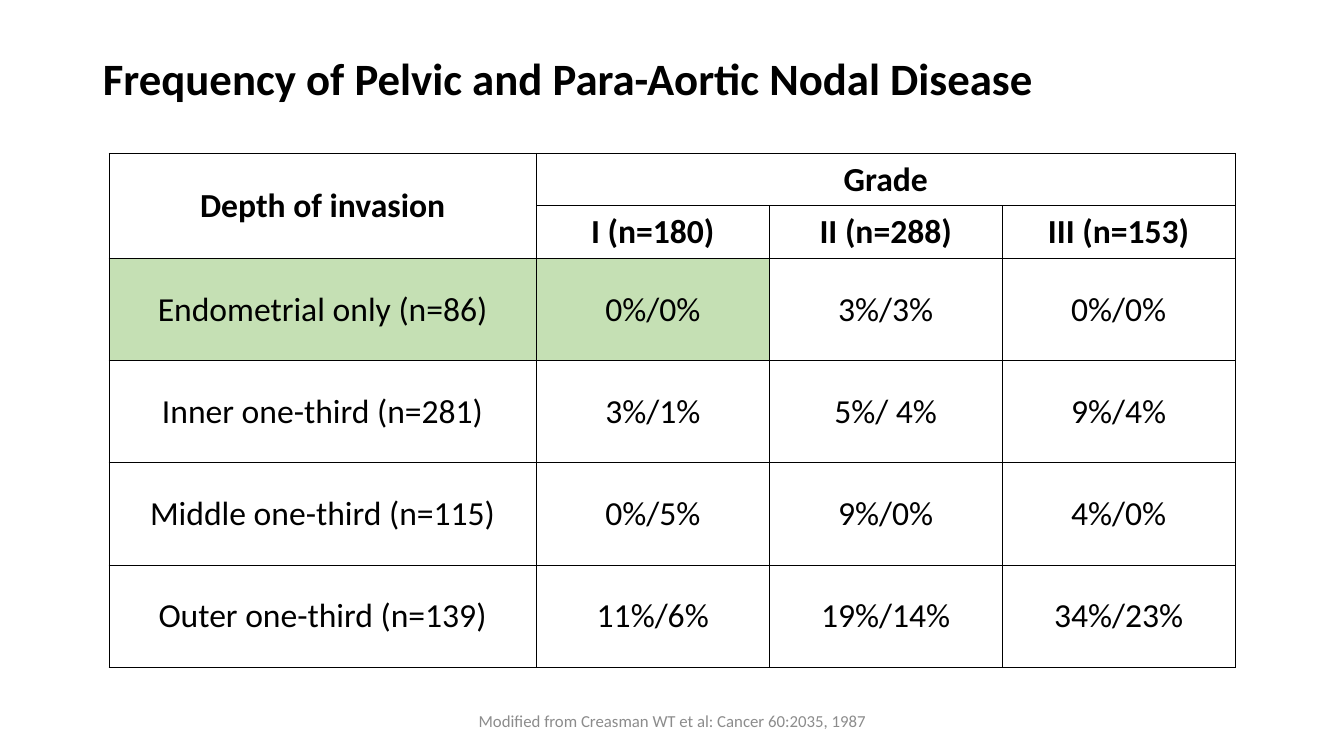
from lxml import etree
from pptx import Presentation
from pptx.dml.color import RGBColor
from pptx.enum.text import MSO_ANCHOR, MSO_AUTO_SIZE, PP_ALIGN
from pptx.oxml.ns import qn
from pptx.util import Inches, Pt

TOP, MIDDLE = MSO_ANCHOR.TOP, MSO_ANCHOR.MIDDLE
LEFT, CENTER = PP_ALIGN.LEFT, PP_ALIGN.CENTER
NO_FIT = MSO_AUTO_SIZE.NONE
TITLE_ONLY = 5

COLORS = {"text": "000000", "source": "8C8C8C", "line": "000000", "highlight": "C5E0B4"}
FORMATS = {
    "title": {"name": "Calibri", "size": Pt(32), "bold": True},
    "header": {"name": "Calibri", "size": Pt(24), "bold": True},
    "body": {"name": "Calibri", "size": Pt(24), "bold": False},
    "source": {"name": "Calibri", "size": Pt(12), "bold": False},
}
CELL_MARGINS = {
    "margin_left": Inches(0.01),
    "margin_right": Inches(0.01),
    "margin_top": Inches(0.01),
    "margin_bottom": 0,
}
ROWS = [
    ["Depth of invasion", "Grade", "", ""],
    ["", "I (n=180)", "II (n=288)", "III (n=153)"],
    ["Endometrial only (n=86)", "0%/0%", "3%/3%", "0%/0%"],
    ["Inner one-third (n=281)", "3%/1%", "5%/ 4%", "9%/4%"],
    ["Middle one-third (n=115)", "0%/5%", "9%/0%", "4%/0%"],
    ["Outer one-third (n=139)", "11%/6%", "19%/14%", "34%/23%"],
]
HEADER_ROWS = 2
HIGHLIGHTED = {(2, 0), (2, 1)}


def set_attrs(obj, values):
    for name, value in values.items():
        setattr(obj, name, value)


def write_text(tf, text, style, color, align):
    p = tf.paragraphs[0]
    p.alignment = align
    r = p.add_run()
    r.text = text
    set_attrs(r.font, FORMATS[style])
    r.font.color.rgb = RGBColor.from_string(COLORS[color])
    return p


def add_title(slide, box, text):
    sp = slide.shapes.title
    set_attrs(sp, dict(zip(("left", "top", "width", "height"), map(Inches, box))))
    tf = sp.text_frame
    set_attrs(tf, {"auto_size": NO_FIT, "word_wrap": True,
                   "vertical_anchor": TOP, "margin_top": Inches(0.16)})
    write_text(tf, text, "title", "text", LEFT).line_spacing = 0.9


def add_source(slide, box, text):
    tf = slide.shapes.add_textbox(*map(Inches, box)).text_frame
    set_attrs(tf, {"word_wrap": True, "vertical_anchor": MIDDLE})
    write_text(tf, text, "source", "source", CENTER)


def add_borders(cell):
    tc_pr = cell._tc.get_or_add_tcPr()
    for side in ("lnL", "lnR", "lnT", "lnB"):
        ln = etree.SubElement(tc_pr, qn(f"a:{side}"), w=str(Pt(0.5)))
        fill = etree.SubElement(ln, qn("a:solidFill"))
        etree.SubElement(fill, qn("a:srgbClr"), val=COLORS["line"])


def add_frequency_table(slide, box):
    left, top, width, height = box
    n_rows, n_cols = len(ROWS), len(ROWS[0])
    header_h, first_w = 0.52, 4.24
    body_h = (height - HEADER_ROWS * header_h) / (n_rows - HEADER_ROWS)
    grade_w = (width - first_w) / (n_cols - 1)
    table = slide.shapes.add_table(n_rows, n_cols, *map(Inches, box)).table
    set_attrs(table, {"first_row": False, "horz_banding": False})
    for j, col in enumerate(table.columns):
        col.width = Inches(grade_w if j else first_w)
    for i, row in enumerate(table.rows):
        row.height = Inches(header_h if i < HEADER_ROWS else body_h)
        for j, text in enumerate(ROWS[i]):
            cell = table.cell(i, j)
            set_attrs(cell, CELL_MARGINS)
            cell.vertical_anchor = MIDDLE
            add_borders(cell)
            if (i, j) in HIGHLIGHTED:
                cell.fill.solid()
                cell.fill.fore_color.rgb = RGBColor.from_string(COLORS["highlight"])
            else:
                cell.fill.background()
            if text:
                style = "header" if i < HEADER_ROWS else "body"
                write_text(cell.text_frame, text, style, "text", CENTER)
    table.cell(0, 0).merge(table.cell(1, 0))
    table.cell(0, 1).merge(table.cell(0, n_cols - 1))


def main():
    prs = Presentation()
    set_attrs(prs, {"slide_width": Inches(13.33), "slide_height": Inches(7.5)})
    slide = prs.slides.add_slide(prs.slide_layouts[TITLE_ONLY])
    add_title(slide, (0.92, 0.4, 11.5, 1.45), "Frequency of Pelvic and Para-Aortic Nodal Disease")
    add_source(slide, (4.42, 6.95, 4.5, 0.4), "Modified from Creasman WT et al: Cancer 60:2035, 1987")
    add_frequency_table(slide, (1.08, 1.52, 11.17, 5.1))
    prs.save("out.pptx")


if __name__ == "__main__":
    main()
